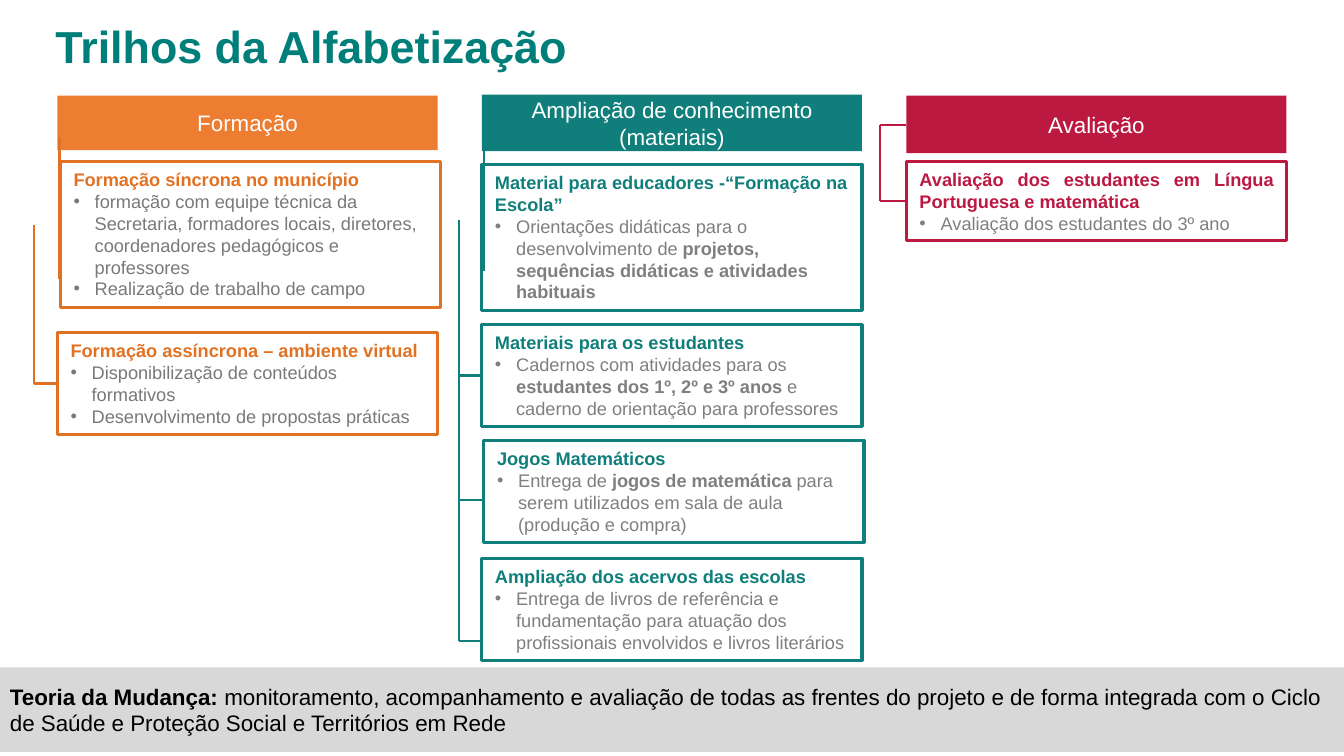
from lxml import etree
from pptx import Presentation, util as u
from pptx.dml.color import RGBColor
from pptx.enum import shapes, text
from pptx.oxml.ns import qn

TITLE_TEAL = RGBColor(0x00, 0x7E, 0x79)
ORANGE = RGBColor(0xED, 0x7D, 0x31)
DARK_ORANGE = RGBColor(0xE1, 0x72, 0x23)
TEAL = RGBColor(0x10, 0x7F, 0x7B)
RED = RGBColor(0xBC, 0x19, 0x41)
WARM_GRAY = RGBColor(0x77, 0x79, 0x7B)
GRAY = RGBColor(0x7F, 0x7F, 0x7F)
BAND = RGBColor(0xD8, 0xD8, 0xD8)
WHITE = RGBColor(0xFF, 0xFF, 0xFF)
BLACK = RGBColor(0x00, 0x00, 0x00)

CELL = 0.1  # inches per grid column and row
TRACK_WIDTH = 37.7
LEFT, JUSTIFY, CENTER = (text.PP_ALIGN.LEFT, text.PP_ALIGN.JUSTIFY,
                         text.PP_ALIGN.CENTER)


def grid(*cells):
    return [u.Inches(cell * CELL) for cell in cells]


def track_left(index):
    return 5.7 + 42.1 * index


def apply(target, values):
    for name, value in values.items():
        setattr(target, name, value)


class Board:
    def __init__(self, deck):
        self.page = deck.slides.add_slide(deck.slide_layouts[5])
        self.font = "Arial"

    def frame(self, box, anchor, inset_x=0, inset_y=0,
              fit=text.MSO_AUTO_SIZE.NONE):
        side, edge = u.Inches(inset_x), u.Inches(inset_y)
        apply(box.text_frame, dict(
            word_wrap=True, auto_size=fit, vertical_anchor=anchor,
            margin_left=side, margin_right=side,
            margin_top=edge, margin_bottom=edge))

    def add_spans(self, para, spans, size, color, align=LEFT):
        """Fill a paragraph from (wording, bold) pairs."""
        para.alignment = align
        for wording, bold in spans:
            span = para.add_run()
            span.text = wording
            apply(span.font, dict(name=self.font, size=u.Pt(size), bold=bold))
            span.font.color.rgb = color

    def bullet(self, para, color):
        props = para._p.get_or_add_pPr()
        props.set("marL", str(u.Inches(0.21)))
        props.set("indent", str(-u.Inches(0.21)))
        tint = etree.SubElement(props, qn("a:buClr"))
        etree.SubElement(tint, qn("a:srgbClr"), val=str(color))
        etree.SubElement(props, qn("a:buFont"), typeface=self.font)
        etree.SubElement(props, qn("a:buChar"), char="•")

    def title(self, wording):
        box = self.page.shapes.title
        apply(box, dict(zip(("left", "top", "width", "height"),
                            grid(5.5, 1.9, 97.3, 5.4))))
        self.frame(box, text.MSO_ANCHOR.TOP)
        self.add_spans(box.text_frame.paragraphs[0], [(wording, True)],
                       32, TITLE_TEAL)

    def rectangle(self, area, fill=None, line=None):
        box = self.page.shapes.add_shape(shapes.MSO_SHAPE.RECTANGLE,
                                         *grid(*area))
        box.shadow.inherit = False
        if fill is None:
            box.fill.background()
        else:
            box.fill.solid()
            box.fill.fore_color.rgb = fill
        if line is None:
            box.line.fill.background()
        else:
            box.line.color.rgb = line
            box.line.width = u.Pt(2.25)
        return box

    def banner(self, area, fill, spans, color, align):
        box = self.rectangle(area, fill)
        self.frame(box, text.MSO_ANCHOR.MIDDLE, 0.1, 0.05)
        self.add_spans(box.text_frame.paragraphs[0], spans, 16, color, align)

    def card(self, area, color, heading, items, body, align=JUSTIFY,
             fill=None):
        box = self.rectangle(area, fill, color)
        self.frame(box, text.MSO_ANCHOR.TOP, 0.13, 0.07,
                   text.MSO_AUTO_SIZE.SHAPE_TO_FIT_TEXT)
        self.add_spans(box.text_frame.paragraphs[0], [(heading, True)],
                       13, color, align)
        for spans in items:
            para = box.text_frame.add_paragraph()
            self.bullet(para, body)
            self.add_spans(para, spans, 13, body)
        return box

    def line(self, start, end, color, target=None):
        """Draw a straight line, joined to the target's left side if given."""
        link = self.page.shapes.add_connector(
            shapes.MSO_CONNECTOR.STRAIGHT, *grid(*start, *end))
        link.line.color.rgb = color
        link.line.width = u.Pt(1.5)
        etree.SubElement(link._element.spPr, qn("a:effectLst"))
        if target is not None:
            link.end_connect(target, 1)


# track, top, height, fill, wording
HEADERS = [
    (0, 9.5, 5.4, ORANGE, "Formação"),
    (1, 9.4, 5.6, TEAL, "Ampliação de conhecimento (materiais)"),
    (2, 9.5, 5.7, RED, "Avaliação"),
]

# track, shift, top, height, color, body color, heading, items, extra format
CARDS = [
    (0, 0.3, 16, 14.5, DARK_ORANGE, WARM_GRAY,
     "Formação síncrona no município",
     [[("formação com equipe técnica da Secretaria, formadores locais, "
        "diretores, coordenadores pedagógicos e professores", False)],
      [("Realização de trabalho de campo", False)]], dict(fill=WHITE)),
    (0, 0, 33, 10.1, DARK_ORANGE, WARM_GRAY,
     "Formação assíncrona – ambiente virtual",
     [[("Disponibilização de conteúdos formativos", False)],
      [("Desenvolvimento de propostas práticas", False)]], {}),
    (1, 0, 16.3, 14.5, TEAL, GRAY,
     "Material para educadores -“Formação na Escola”",
     [[("Orientações didáticas para o desenvolvimento de ", False),
       ("projetos, sequências didáticas e atividades habituais", True)]],
     dict(align=LEFT)),
    (1, 0, 32.2, 10.1, TEAL, GRAY, "Materiais para os estudantes",
     [[("Cadernos com atividades para os ", False),
       ("estudantes dos 1º, 2º e 3º anos ", True),
       ("e caderno de orientação para professores", False)]], {}),
    (1, 0.2, 43.7, 10.1, TEAL, GRAY, "Jogos Matemáticos",
     [[("Entrega de ", False), ("jogos de matemática ", True),
       ("para serem utilizados em sala de aula (produção e compra)", False)]],
     {}),
    (1, 0, 55.4, 10.1, TEAL, GRAY, "Ampliação dos acervos das escolas",
     [[("Entrega de livros de referência e fundamentação para atuação dos "
        "profissionais envolvidos e livros literários", False)]], {}),
    (2, 0, 16, 7.9, RED, GRAY,
     "Avaliação dos estudantes em Língua Portuguesa e matemática",
     [[("Avaliação dos estudantes do 3º ano", False)]], {}),
]

# track, offset from its left edge, top, bottom, color
RAILS = [
    (0, 0.2, 13.6, 27.7, DARK_ORANGE),
    (0, -2.3, 22.3, 38.05, DARK_ORANGE),
    (1, 0.2, 13.6, 26.9, TEAL),
    (1, -2.3, 21.8, 63.6, TEAL),
    (2, -2.6, 12.4, 19.95, RED),
]

# track, offset, height on the slide, color, index of the joined card
SPURS = [
    (0, -2.3, 38.05, DARK_ORANGE, 1),
    (1, -2.3, 37.25, TEAL, 3),
    (1, -2.3, 49.6, TEAL, None),
    (1, -2.3, 63.6, TEAL, None),
    (2, -2.6, 12.4, RED, None),
    (2, -2.6, 19.95, RED, 6),
]


def main():
    deck = Presentation()
    deck.slide_width, deck.slide_height = u.Inches(13.33), u.Inches(7.5)
    board = Board(deck)
    board.title("Trilhos da Alfabetização")
    for track, top, height, fill, wording in HEADERS:
        board.banner((track_left(track), top, TRACK_WIDTH, height), fill,
                     [(wording, False)], WHITE, CENTER)
    cards = []
    for track, shift, top, height, color, body, heading, items, extra in CARDS:
        area = (track_left(track) + shift, top, TRACK_WIDTH, height)
        cards.append(board.card(area, color, heading, items, body, **extra))
    for track, offset, top, bottom, color in RAILS:
        x = track_left(track) + offset
        board.line((x, top), (x, bottom), color)
    for track, offset, y, color, joined in SPURS:
        edge = track_left(track)
        target = None if joined is None else cards[joined]
        board.line((edge + offset, y), (edge, y), color, target)
    board.banner((0, 66.2, 133.3, 8.4), BAND, [
        ("Teoria da Mudança: ", True),
        ("monitoramento, acompanhamento e avaliação de todas as frentes do "
         "projeto e de forma integrada com o Ciclo de Saúde e Proteção Social "
         "e Territórios em Rede", False)], BLACK, LEFT)
    deck.save("out.pptx")


if __name__ == "__main__":
    main()
